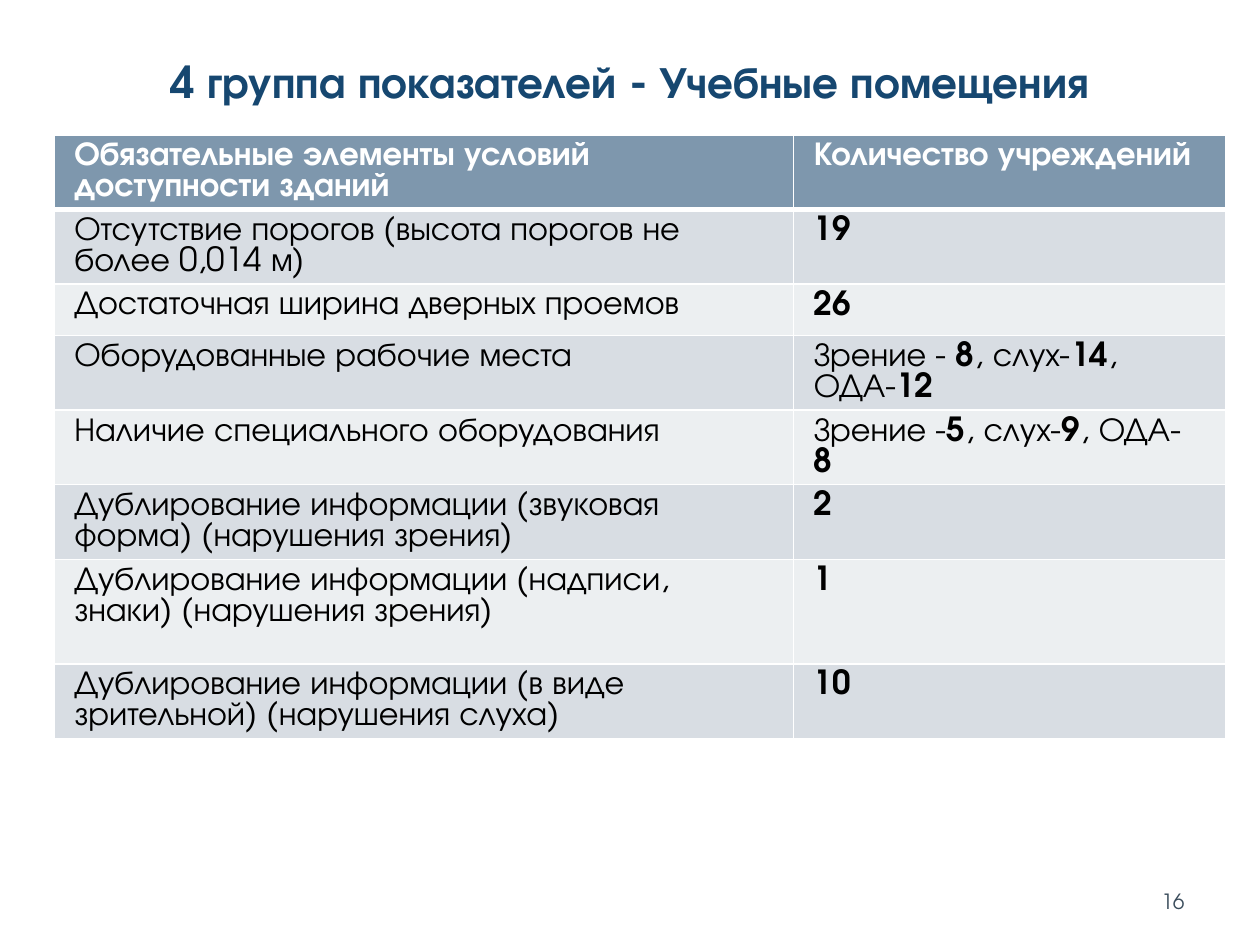
from lxml import etree
from pptx import Presentation
from pptx.dml.color import RGBColor
from pptx.enum import text
from pptx.oxml.ns import qn
from pptx.util import Inches, Pt

FONT = "TeX Gyre Adventor"
WHITE = RGBColor(0xFF, 0xFF, 0xFF)
BLACK = RGBColor(0, 0, 0)
TITLE_BLUE = RGBColor(0x16, 0x47, 0x70)
NUMBER_GREY = RGBColor(0x3A, 0x4C, 0x5B)
HEADER_FILL = RGBColor(0x7E, 0x97, 0xAD)
BAND_FILLS = (RGBColor(0xD8, 0xDD, 0xE3), RGBColor(0xEC, 0xEF, 0xF1))

HEADERS = ("Обязательные элементы условий доступности зданий",
           "Количество учреждений")
# Requirement, count as alternating plain and bold pieces, row height
ROWS = (
    ("Отсутствие порогов (высота порогов не более 0,014 м)", ("", "19"), 0.59),
    ("Достаточная ширина дверных проемов", ("", "26"), 0.41),
    ("Оборудованные рабочие места",
     ("Зрение - ", "8", ", слух-", "14", ", ОДА-", "12"), 0.59),
    ("Наличие специального оборудования",
     ("Зрение -", "5", ", слух-", "9", ", ОДА- ", "8"), 0.59),
    ("Дублирование информации (звуковая форма) (нарушения зрения)",
     ("", "2"), 0.59),
    ("Дублирование информации (надписи, знаки) (нарушения зрения)",
     ("", "1"), 0.83),
    ("Дублирование информации (в виде зрительной) (нарушения слуха)",
     ("", "10"), 0.59),
)
HEADER_HEIGHT = 0.58
COLUMN_WIDTHS = (5.87, 3.43)


def style_font(font, size, color, bold=None):
    font.name = FONT
    font.size = Pt(size)
    font.color.rgb = color
    if bold is not None:
        font.bold = bold


def add_label(slide, wording, left, top, width, height, align, size, color, bold):
    frame = slide.shapes.add_textbox(
        Inches(left), Inches(top), Inches(width), Inches(height)).text_frame
    frame.word_wrap = True
    frame.vertical_anchor = text.MSO_ANCHOR.MIDDLE
    line = frame.paragraphs[0]
    line.text = wording
    line.alignment = align
    style_font(line.font, size, color, bold)


def set_borders(cell, bottom_width):
    properties = cell._tc.get_or_add_tcPr()
    widths = {"a:lnL": 1, "a:lnR": 1, "a:lnT": 1, "a:lnB": bottom_width}
    for position, (side, width) in enumerate(widths.items()):
        border = etree.Element(qn(side), w=str(Pt(width)))
        fill = etree.SubElement(border, qn("a:solidFill"))
        etree.SubElement(fill, qn("a:srgbClr"), val=str(WHITE))
        properties.insert(position, border)


def fill_cell(cell, pieces, color, fill, bottom_width=1):
    """Write (wording, bold) pieces into a cell and dress it."""
    cell.margin_left = cell.margin_right = Inches(0.16)
    cell.fill.solid()
    cell.fill.fore_color.rgb = fill
    set_borders(cell, bottom_width)
    line = cell.text_frame.paragraphs[0]
    line.line_spacing = Pt(17.7)
    style_font(line.font, 19, color)
    for wording, bold in pieces:
        run = line.add_run()
        run.text = wording
        style_font(run.font, 19, color, bold)


def add_accessibility_table(slide):
    heights = [HEADER_HEIGHT] + [row[2] for row in ROWS]
    table = slide.shapes.add_table(
        len(heights), len(COLUMN_WIDTHS), Inches(0.43), Inches(1.07),
        Inches(sum(COLUMN_WIDTHS)), Inches(sum(heights))).table
    for column, width in zip(table.columns, COLUMN_WIDTHS):
        column.width = Inches(width)
    for row, height in zip(table.rows, heights):
        row.height = Inches(height)

    # Header row
    for index, header in enumerate(HEADERS):
        fill_cell(table.cell(0, index), [(header, True)], WHITE, HEADER_FILL, 3)

    # Banded body rows
    for index, (requirement, count, _) in enumerate(ROWS):
        fill = BAND_FILLS[index % 2]
        pieces = [(piece, i % 2 == 1) for i, piece in enumerate(count) if piece]
        fill_cell(table.cell(index + 1, 0), [(requirement, False)], BLACK, fill)
        fill_cell(table.cell(index + 1, 1), pieces, BLACK, fill)


def main():
    deck = Presentation()
    deck.slide_width, deck.slide_height = Inches(10), Inches(7.5)
    slide = deck.slides.add_slide(deck.slide_layouts[6])

    # Title
    add_label(slide, "4 группа показателей - Учебные помещения",
              0.5, 0.3, 9, 0.69, text.PP_ALIGN.CENTER, 25.2, TITLE_BLUE, True)
    add_accessibility_table(slide)
    # Slide number
    add_label(slide, "16", 7.17, 6.95, 2.33, 0.4,
              text.PP_ALIGN.RIGHT, 12, NUMBER_GREY, False)

    deck.save("out.pptx")


if __name__ == "__main__":
    main()
